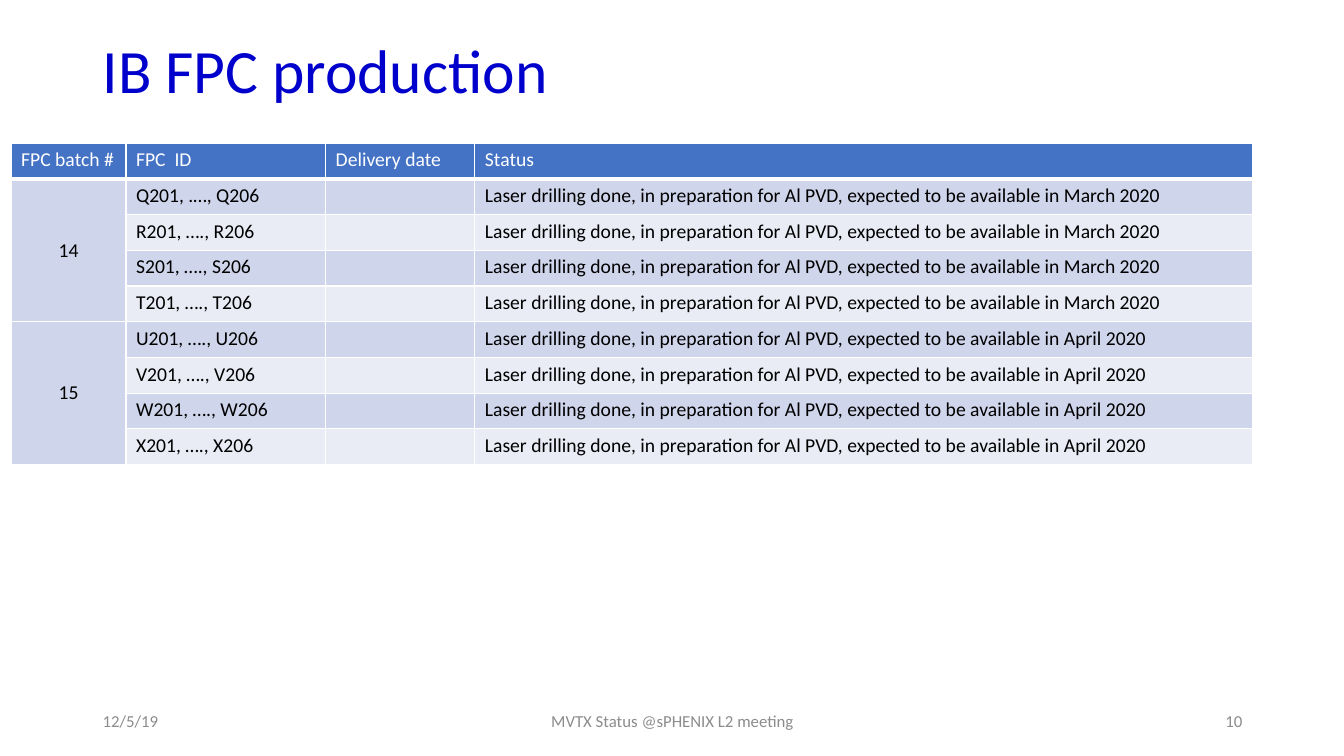
from lxml import etree
from pptx import Presentation
from pptx.dml.color import RGBColor
from pptx.enum import text
from pptx.oxml.ns import qn
from pptx.util import Inches, Pt

FONT = "Calibri"
TITLE_BLUE = RGBColor(0x00, 0x00, 0xCC)
FOOTER_GRAY = RGBColor(0x8C, 0x8C, 0x8C)
HEADER_BLUE = RGBColor(0x44, 0x72, 0xC4)
BAND_DARK = RGBColor(0xCF, 0xD5, 0xEA)
BAND_LIGHT = RGBColor(0xE9, 0xEB, 0xF5)
WHITE = RGBColor(0xFF, 0xFF, 0xFF)
BLACK = RGBColor(0x00, 0x00, 0x00)

LEFT, CENTER, RIGHT = text.PP_ALIGN.LEFT, text.PP_ALIGN.CENTER, text.PP_ALIGN.RIGHT
MIDDLE = text.MSO_ANCHOR.MIDDLE

HEADERS = ["FPC batch #", "FPC  ID", "Delivery date", "Status"]
COLUMN_WIDTHS = [1.14, 1.98, 1.48, 7.71]
BATCHES = [
    ("14", "March", ["Q201, .…, Q206", "R201, …., R206", "S201, …., S206", "T201, …., T206"]),
    ("15", "April", ["U201, …., U206", "V201, …., V206", "W201, …., W206", "X201, …., X206"]),
]
STATUS = "Laser drilling done, in preparation for Al PVD, expected to be available in {} 2020"


def write(paragraph, words, size, color, align=LEFT):
    paragraph.text = words
    paragraph.alignment = align
    paragraph.font.name = FONT
    paragraph.font.size = Pt(size)
    paragraph.font.color.rgb = color


def add_label(slide, words, left, top, width, height, size, color, align=LEFT):
    box = slide.shapes.add_textbox(Inches(left), Inches(top), Inches(width), Inches(height))
    frame = box.text_frame
    frame.word_wrap = True
    frame.vertical_anchor = MIDDLE
    write(frame.paragraphs[0], words, size, color, align)
    return frame.paragraphs[0]


def set_borders(cell, bottom):
    """Draw white cell edges, 1 pt except for the given bottom width."""
    properties = cell._tc.get_or_add_tcPr()
    for index, (edge, width) in enumerate([("lnL", 1), ("lnR", 1), ("lnT", 1), ("lnB", bottom)]):
        line = etree.Element(qn(f"a:{edge}"), w=str(Pt(width)))
        fill = etree.SubElement(line, qn("a:solidFill"))
        etree.SubElement(fill, qn("a:srgbClr"), val=str(WHITE))
        properties.insert(index, line)


def fill_cell(cell, words, fill, color=BLACK, align=LEFT, bottom=1):
    paragraph = cell.text_frame.paragraphs[0]
    write(paragraph, words, 14, color, align)
    if not words:
        # An empty cell takes its line height from the end-of-paragraph size.
        etree.SubElement(paragraph._p, qn("a:endParaRPr"), sz="1400")
    cell.fill.solid()
    cell.fill.fore_color.rgb = fill
    set_borders(cell, bottom)


def add_production_table(slide):
    row_count = 1 + sum(len(ids) for _, _, ids in BATCHES)
    table = slide.shapes.add_table(
        row_count, len(HEADERS), Inches(0.11), Inches(1.42), Inches(12.31), Inches(3.19)
    ).table
    for column, width in zip(table.columns, COLUMN_WIDTHS):
        column.width = Inches(width)
    for column, header in enumerate(HEADERS):
        fill_cell(table.cell(0, column), header, HEADER_BLUE, WHITE, bottom=3)

    row = 1
    for batch, month, ids in BATCHES:
        first = row
        for fpc_id in ids:
            band = BAND_DARK if row % 2 else BAND_LIGHT
            values = [batch if row == first else "", fpc_id, "", STATUS.format(month)]
            for column, value in enumerate(values):
                fill_cell(table.cell(row, column), value, band if column else BAND_DARK,
                          align=LEFT if column else CENTER)
            row += 1
        table.cell(first, 0).merge(table.cell(row - 1, 0))
        table.cell(first, 0).vertical_anchor = MIDDLE


def main():
    presentation = Presentation()
    presentation.slide_width = Inches(13.33)
    presentation.slide_height = Inches(7.5)
    slide = presentation.slides.add_slide(presentation.slide_layouts[6])

    title = add_label(slide, "IB FPC production", 0.92, 0, 11.5, 1.45, 44, TITLE_BLUE)
    title.line_spacing = 0.9
    add_production_table(slide)
    for words, left, width, align in [
        ("12/5/19", 0.92, 3, LEFT),
        ("MVTX Status @sPHENIX L2 meeting", 4.42, 4.5, CENTER),
        ("10", 9.42, 3, RIGHT),
    ]:
        add_label(slide, words, left, 6.95, width, 0.4, 12, FOOTER_GRAY, align)

    presentation.save("out.pptx")


if __name__ == "__main__":
    main()
